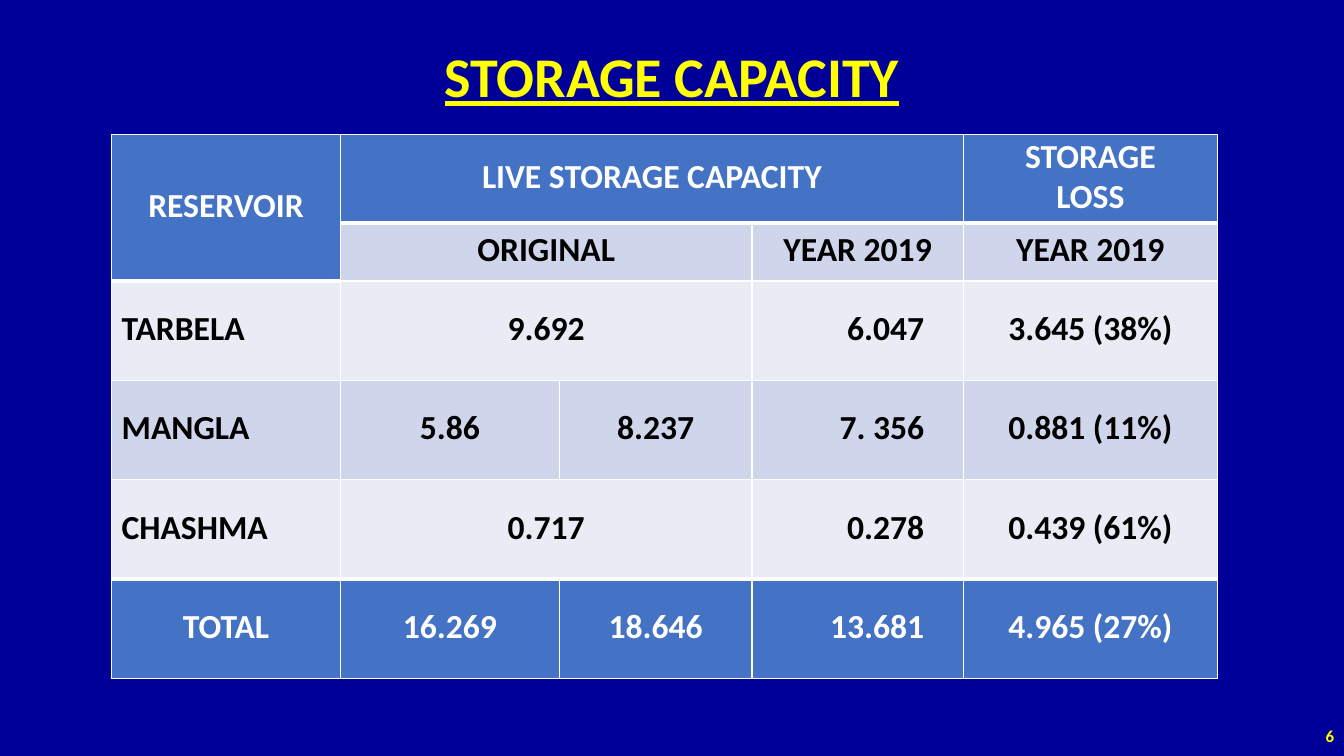
import dataclasses

import pptx
import pptx.dml.color
import pptx.enum.text
import pptx.oxml
import pptx.oxml.ns
import pptx.util

Pt = pptx.util.Pt
ALIGN = pptx.enum.text.PP_ALIGN
MIDDLE = pptx.enum.text.MSO_ANCHOR.MIDDLE


@dataclasses.dataclass(frozen=True)
class Theme:
    font: str = "Calibri"
    background: str = "000099"
    accent: str = "FFFF00"
    header: str = "4472C4"
    band_dark: str = "CFD5EA"
    band_light: str = "E9EBF5"
    white: str = "FFFFFF"
    black: str = "000000"
    title_size: int = 40
    table_size: int = 24
    number_size: int = 12
    thin: int = 1
    heavy: int = 3


THEME = Theme()

# None marks a position covered by a merged cell
CAPACITY_ROWS = [
    ["RESERVOIR", "LIVE STORAGE CAPACITY", None, None, "STORAGE\nLOSS"],
    [None, "ORIGINAL", None, "YEAR 2019", "YEAR 2019"],
    ["TARBELA", "9.692", None, "6.047", "3.645 (38%)"],
    ["MANGLA", "5.86", "8.237", "7. 356", "0.881 (11%)"],
    ["CHASHMA", "0.717", None, "0.278", "0.439 (61%)"],
    ["TOTAL", "16.269", "18.646", "13.681", "4.965 (27%)"],
]
MERGES = [((0, 0), (1, 0)), ((0, 1), (0, 3)), ((1, 1), (1, 2)),
          ((2, 1), (2, 2)), ((4, 1), (4, 2))]
COLUMN_WIDTHS = [163.5, 156.5, 137.5, 151, 181.5]
ROW_HEIGHTS = [63.4, 41.4, 71, 71, 71, 71]
TOTAL_ROW = len(CAPACITY_ROWS) - 1
CURRENT_COLUMN = 3


def rgb(value):
    return pptx.dml.color.RGBColor.from_string(value)


def style_paragraph(paragraph, size, color, align):
    paragraph.alignment = align
    font = paragraph.font
    font.name, font.size, font.bold = THEME.font, Pt(size), True
    font.color.rgb = rgb(color)


def add_line_of_text(slide, box, text, size, align):
    frame = slide.shapes.add_textbox(*map(Pt, box)).text_frame
    frame.word_wrap = True
    frame.vertical_anchor = MIDDLE
    paragraph = frame.paragraphs[0]
    paragraph.text = text
    style_paragraph(paragraph, size, THEME.accent, align)
    return paragraph


def add_title(slide, box):
    title = add_line_of_text(slide, box, "STORAGE CAPACITY",
                             THEME.title_size, ALIGN.CENTER)
    title.line_spacing = 0.9
    title.font.underline = True


def add_slide_number(slide, box):
    add_line_of_text(slide, box, "6", THEME.number_size, ALIGN.RIGHT)


def heavy_below(row, column):
    return row in (0, TOTAL_ROW - 1) or (row, column) == (1, 0)


def add_borders(cell, row, column):
    properties = cell._tc.get_or_add_tcPr()
    for side in "LRTB":
        heavy = (side == "B" and heavy_below(row, column)
                 or side == "T" and row > 0 and heavy_below(row - 1, column))
        width = Pt(THEME.heavy if heavy else THEME.thin)
        properties.append(pptx.oxml.parse_xml(
            f'<a:ln{side} {pptx.oxml.ns.nsdecls("a")} w="{width}">'
            f'<a:solidFill><a:srgbClr val="{THEME.white}"/></a:solidFill>'
            f'</a:ln{side}>'))


def cell_colors(row, column):
    if row in (0, TOTAL_ROW) or (row, column) == (1, 0):
        return THEME.header, THEME.white
    return (THEME.band_dark if row % 2 else THEME.band_light), THEME.black


def cell_alignment(row, column):
    if row >= 2 and column == CURRENT_COLUMN:
        return ALIGN.RIGHT
    if 2 <= row < TOTAL_ROW and column == 0:
        return ALIGN.LEFT
    return ALIGN.CENTER


def add_capacity_table(slide, box):
    table = slide.shapes.add_table(
        len(ROW_HEIGHTS), len(COLUMN_WIDTHS), *map(Pt, box)).table
    for column, width in zip(table.columns, COLUMN_WIDTHS):
        column.width = Pt(width)
    for row, height in zip(table.rows, ROW_HEIGHTS):
        row.height = Pt(height)
    for first, last in MERGES:
        table.cell(*first).merge(table.cell(*last))

    for r, texts in enumerate(CAPACITY_ROWS):
        for c, text in enumerate(texts):
            cell = table.cell(r, c)
            fill, color = cell_colors(r, c)
            add_borders(cell, r, c)
            cell.fill.solid()
            cell.fill.fore_color.rgb = rgb(fill)
            if text is None:
                continue
            cell.vertical_anchor = MIDDLE
            align = cell_alignment(r, c)
            if align == ALIGN.RIGHT:
                cell.margin_right = Pt(28)
            cell.text_frame.text = text
            for index, paragraph in enumerate(cell.text_frame.paragraphs):
                style_paragraph(paragraph, THEME.table_size, color, align)
                paragraph.line_spacing = 0.8
                if index:
                    paragraph.space_before = Pt(0.2 * THEME.table_size)


def build_storage_slide(presentation):
    slide = presentation.slides.add_slide(presentation.slide_layouts[6])
    slide.background.fill.solid()
    slide.background.fill.fore_color.rgb = rgb(THEME.background)
    add_slide_number(slide, (744, 511, 216, 29))
    add_title(slide, (120, 20, 720, 73.5))
    add_capacity_table(
        slide, (79.7, 96, sum(COLUMN_WIDTHS), sum(ROW_HEIGHTS)))


def main():
    presentation = pptx.Presentation()
    presentation.slide_width, presentation.slide_height = Pt(960), Pt(540)
    build_storage_slide(presentation)
    presentation.save("out.pptx")


if __name__ == "__main__":
    main()
